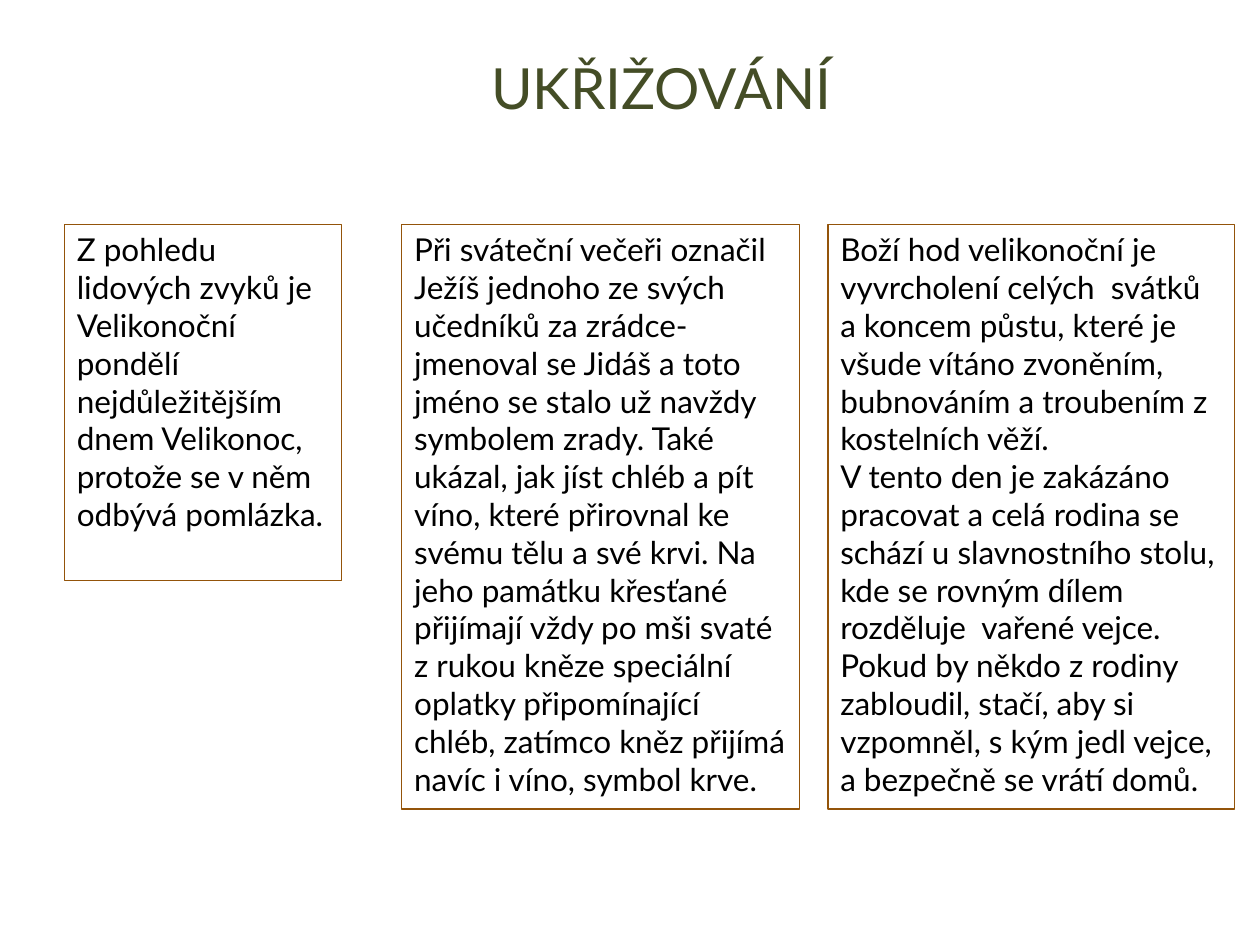
from dataclasses import dataclass

import pptx
import pptx.dml.color
import pptx.enum.shapes
import pptx.enum.text
import pptx.slide
import pptx.text.text
import pptx.util

Cm = pptx.util.Cm
ALIGN = pptx.enum.text.PP_ALIGN
ANCHOR = pptx.enum.text.MSO_ANCHOR
OLIVE = pptx.dml.color.RGBColor(0x44, 0x4D, 0x26)
BROWN = pptx.dml.color.RGBColor(0x93, 0x54, 0x0A)
BLACK = pptx.dml.color.RGBColor(0, 0, 0)
FONT = "Lato"
COLUMN_TOP = 4.52


@dataclass(frozen=True)
class Column:
    """A framed block of text; lengths are in centimetres."""
    left: float
    width: float
    height: float
    paragraphs: tuple[str, ...]


COLUMNS = (
    Column(1.3, 5.59, 7.19, (
        "Z pohledu lidových zvyků je Velikonoční pondělí nejdůležitějším "
        "dnem Velikonoc, protože se v něm odbývá pomlázka.",
    )),
    Column(8.1, 8.02, 11.79, (
        "Při sváteční večeři označil Ježíš jednoho ze svých učedníků za "
        "zrádce-jmenoval se Jidáš a toto jméno se stalo už navždy symbolem "
        "zrady. Také ukázal, jak jíst chléb a pít víno, které přirovnal ke "
        "svému tělu a své krvi. Na jeho památku křesťané přijímají vždy po "
        "mši svaté z rukou kněze speciální oplatky připomínající chléb, "
        "zatímco kněz přijímá navíc i víno, symbol krve.",
    )),
    Column(16.69, 8.2, 11.79, (
        "Boží hod velikonoční je vyvrcholení celých  svátků a koncem půstu, "
        "které je všude vítáno zvoněním, bubnováním a troubením z "
        "kostelních věží.",
        "V tento den je zakázáno pracovat a celá rodina se schází u "
        "slavnostního stolu, kde se rovným dílem rozděluje  vařené vejce. "
        "Pokud by někdo z rodiny zabloudil, stačí, aby si vzpomněl, s kým "
        "jedl vejce, a bezpečně se vrátí domů.",
    )),
)


def write_text(frame: pptx.text.text.TextFrame, paragraphs: tuple[str, ...], *,
               size: float, color: pptx.dml.color.RGBColor,
               align: ALIGN = ALIGN.LEFT, line_spacing: float = 1.0) -> None:
    frame.word_wrap = True
    frame.auto_size = pptx.enum.text.MSO_AUTO_SIZE.NONE
    frame.vertical_anchor = ANCHOR.TOP
    for index, text in enumerate(paragraphs):
        paragraph = frame.add_paragraph() if index else frame.paragraphs[0]
        paragraph.alignment = align
        paragraph.line_spacing = line_spacing
        run = paragraph.add_run()
        run.text = text
        run.font.name = FONT
        run.font.size = pptx.util.Pt(size)
        run.font.color.rgb = color


def draw_title(slide: pptx.slide.Slide, text: str) -> None:
    title = slide.shapes.title
    title.left, title.top = Cm(1.27), Cm(1.27)
    title.width, title.height = Cm(24.13), Cm(2.34)
    title.text_frame.margin_top = 0
    write_text(title.text_frame, (text,), size=32.4, color=OLIVE,
               align=ALIGN.CENTER, line_spacing=0.85)


def draw_column(slide: pptx.slide.Slide, column: Column) -> None:
    frame = slide.shapes.add_shape(
        pptx.enum.shapes.MSO_SHAPE.RECTANGLE, Cm(column.left), Cm(COLUMN_TOP),
        Cm(column.width), Cm(column.height))
    frame.shadow.inherit = False
    frame.fill.background()
    frame.line.color.rgb = BROWN
    frame.line.width = pptx.util.Pt(0.75)
    write_text(frame.text_frame, column.paragraphs, size=18, color=BLACK)


def main() -> None:
    deck = pptx.Presentation()
    deck.slide_width, deck.slide_height = Cm(25.4), Cm(19.05)
    slide = deck.slides.add_slide(deck.slide_layouts.get_by_name("Title Only"))
    draw_title(slide, "UKŘIŽOVÁNÍ")
    for column in COLUMNS:
        draw_column(slide, column)
    deck.save("out.pptx")


if __name__ == "__main__":
    main()
